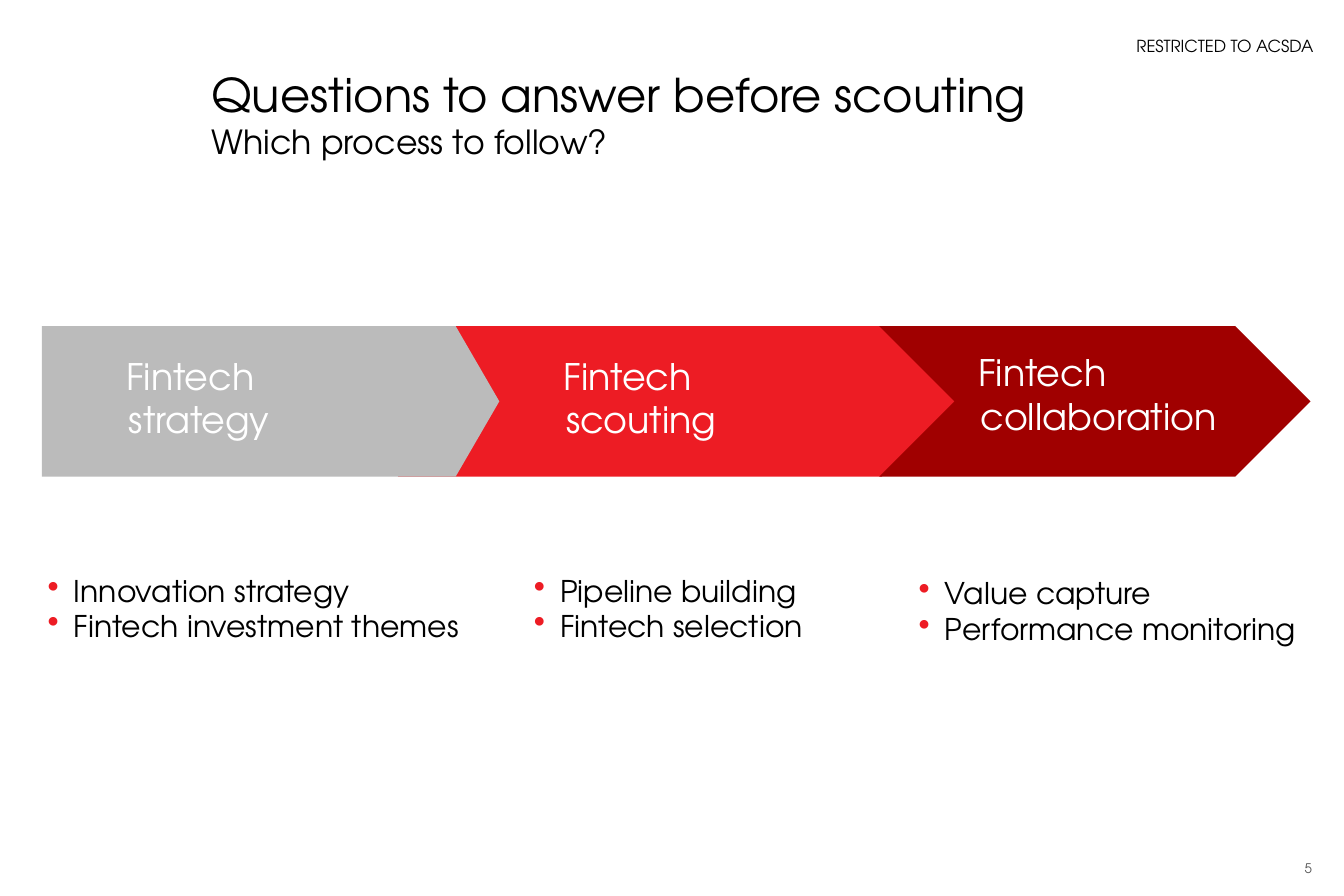
from dataclasses import dataclass
from lxml.etree import SubElement
from pptx import Presentation
from pptx.dml.color import RGBColor
from pptx.enum.shapes import MSO_SHAPE
from pptx.enum.text import MSO_ANCHOR, PP_ALIGN
from pptx.oxml.ns import qn
from pptx.util import Inches, Pt


@dataclass(frozen=True)
class Theme:
    face: str = "TeX Gyre Adventor"
    ink: str = "000000"
    white: str = "FFFFFF"
    muted: str = "555555"
    gray: str = "BBBBBB"
    red: str = "ED1C24"
    dark: str = "A00000"
    title: int = 28
    label: int = 22
    under: int = 20
    body: int = 18
    tag: int = 10
    page: int = 8


def write(para, text, size, color, face, align=PP_ALIGN.LEFT, lead=None, left=0, first=0, dot=None):
    props = para._p.get_or_add_pPr()
    props.set("marL", str(Inches(left)))
    props.set("indent", str(Inches(first)))
    if dot:
        tint = SubElement(props, qn("a:buClr"))
        SubElement(tint, qn("a:srgbClr"), val=dot)
        SubElement(props, qn("a:buSzPct"), val="111000")
        SubElement(props, qn("a:buChar"), char="•")
    para.alignment = align
    if lead:
        para.line_spacing = lead
    run = para.add_run()
    run.text = text
    run.font.name = face
    run.font.size = Pt(size)
    run.font.color.rgb = RGBColor.from_string(color)


class Board:
    def __init__(self, deck, theme):
        self.deck = deck
        self.theme = theme
        self.slide = deck.slides.add_slide(deck.slide_layouts[6])

    def place(self, x, y, wide, high):
        across, down = self.deck.slide_width / 100, self.deck.slide_height / 100
        return [round(n) for n in (x * across, y * down, wide * across, high * down)]

    def text(self, area, lines, anchor=MSO_ANCHOR.TOP, inset=True, **form):
        frame = self.slide.shapes.add_textbox(*self.place(*area)).text_frame
        frame.word_wrap = True
        frame.vertical_anchor = anchor
        if not inset:
            frame.margin_left = frame.margin_right = 0
            frame.margin_top = frame.margin_bottom = 0
        for i, (line, size) in enumerate(lines):
            para = frame.add_paragraph() if i else frame.paragraphs[0]
            write(para, line, size, **{"color": self.theme.ink, "face": self.theme.face, **form})

    def arrow(self, kind, area, color, point=0.5):
        shape = self.slide.shapes.add_shape(kind, *self.place(*area))
        shape.adjustments[0] = point
        shape.shadow.inherit = False
        shape.fill.solid()
        shape.fill.fore_color.rgb = RGBColor.from_string(color)
        shape.line.fill.background()

    def label(self, area, name):
        self.text(area, [(name, self.theme.label)], color=self.theme.white, left=0.02, first=-0.02)

    def bullets(self, area, items):
        self.text(area, [(item, self.theme.body) for item in items], MSO_ANCHOR.MIDDLE,
                  left=0.22, first=-0.22, dot=self.theme.red)


def main():
    deck = Presentation()
    deck.slide_width, deck.slide_height = Inches(11.25), Inches(7.5)
    theme = Theme()
    board = Board(deck, theme)

    board.text((30.76, 1.73, 67.82, 5.2), [("RESTRICTED TO ACSDA", theme.tag)],
               MSO_ANCHOR.BOTTOM, align=PP_ALIGN.RIGHT, lead=1.1)
    board.text((15.73, 7.33, 70.84, 10.53),
               [("Questions to answer before scouting", theme.title),
                ("Which process to follow?", theme.under)], inset=False)
    board.text((94.76, 95.2, 3.73, 3.2), [("5", theme.page)],
               MSO_ANCHOR.BOTTOM, align=PP_ALIGN.RIGHT, color=theme.muted)

    top, high = 36.4, 16.8
    for kind, x, wide, color, point in (
        (MSO_SHAPE.CHEVRON, 29.6, 41.6, theme.red, 0.5),
        (MSO_SHAPE.PENTAGON, 3.11, 34.04, theme.gray, 0.29),
        (MSO_SHAPE.CHEVRON, 65.42, 32.09, theme.dark, 0.5),
    ):
        board.arrow(kind, (x, top, wide, high), color, point)

    for x, y, wide, name in (
        (8.53, 38.8, 16.09, "Fintech strategy"),
        (41.07, 38.8, 16.09, "Fintech scouting"),
        (71.91, 38.4, 20.27, "Fintech collaboration"),
    ):
        board.label((x, y, wide, 12.53), name)

    for x, y, wide, items in (
        (2.67, 58.4, 34.04, ("Innovation strategy", "Fintech investment themes")),
        (38.84, 58.4, 28, ("Pipeline building", "Fintech selection")),
        (67.47, 58.67, 32, ("Value capture", "Performance monitoring")),
    ):
        board.bullets((x, y, wide, 18.93), items)

    deck.save("out.pptx")


if __name__ == "__main__":
    main()
